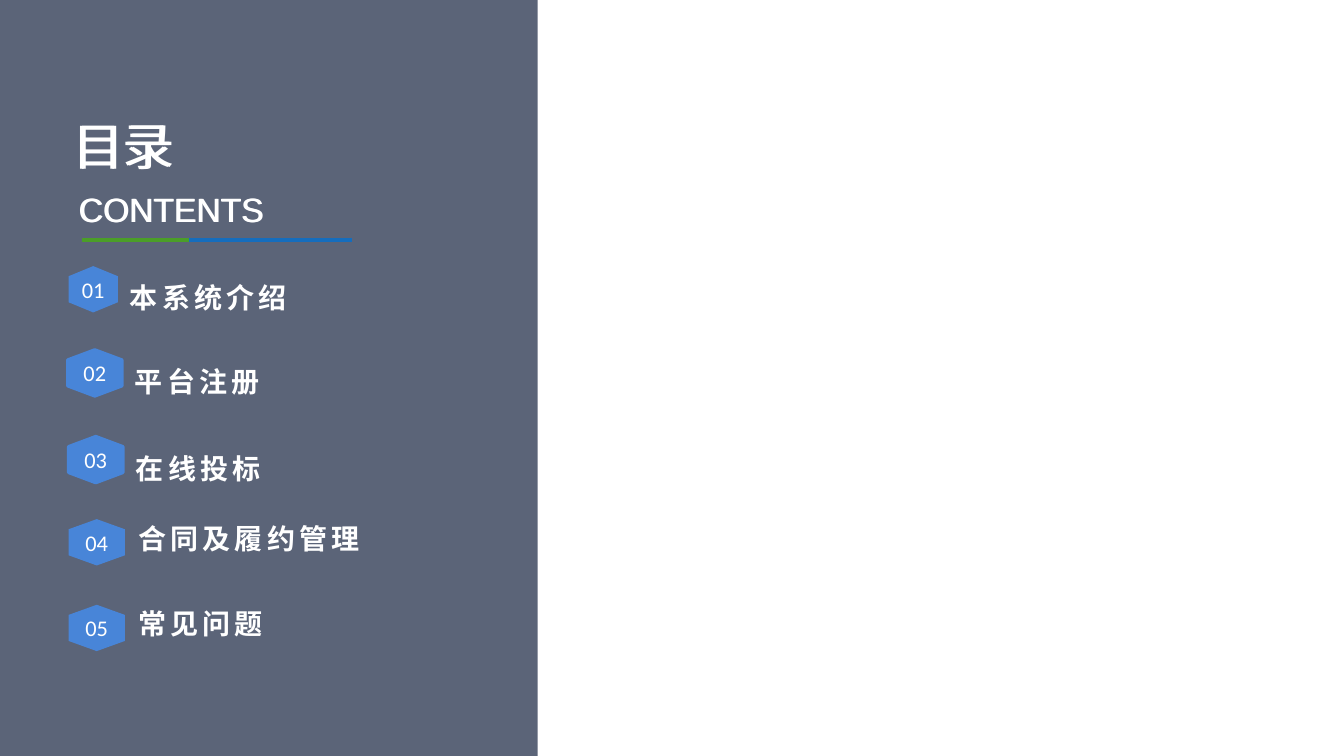
from lxml import etree
from pptx import Presentation
from pptx.dml.color import RGBColor
from pptx.enum.shapes import MSO_CONNECTOR, MSO_SHAPE
from pptx.enum.text import MSO_ANCHOR, MSO_AUTO_SIZE, PP_ALIGN
from pptx.oxml.ns import qn
from pptx.util import Inches, Pt

RECT = MSO_SHAPE.RECTANGLE
LINE = MSO_CONNECTOR.STRAIGHT
GROW = MSO_AUTO_SIZE.SHAPE_TO_FIT_TEXT
MIDDLE = MSO_ANCHOR.MIDDLE
CENTER = PP_ALIGN.CENTER

WIDE, HIGH = Inches(13.33), Inches(7.5)
HAN, SANS, DIGIT = "Noto Sans CJK SC", "Arial", "Calibri"
WHITE, NAVY, BLUE = "FFFFFF", "0B1836", "4885D8"
GREEN, AZURE = "4B9E28", "156DBD"


def color(code):
    return RGBColor.from_string(code)


def across(share):
    return round(WIDE * share / 100)


def down(share):
    return round(HIGH * share / 100)


class Page:
    """Draws styled elements on one slide, with lengths in percent of its size."""

    def __init__(self, slide):
        self.shapes = slide.shapes

    def panel(self, x, y, w, h, fill, alpha):
        box = self.shapes.add_shape(RECT, across(x), down(y), across(w), down(h))
        box.shadow.inherit = False
        box.fill.solid()
        box.fill.fore_color.rgb = color(fill)
        tint = box.fill._xPr.find(qn("a:solidFill"))[0]
        etree.SubElement(tint, qn("a:alpha")).set("val", str(alpha * 1000))
        box.line.fill.background()

    def rule(self, left, right, y, ink):
        line = self.shapes.add_connector(
            LINE, across(left), down(y), across(right), down(y))
        line.line.color.rgb = color(ink)
        line.line.width = Pt(3)
        etree.SubElement(line._element.spPr, qn("a:effectLst"))

    def run(self, para, words, size, face, bold=False, gap=0):
        run = para.add_run()
        run.text = words
        font = run.font
        font.size, font.name, font.bold = Pt(size), face, bold
        font.color.rgb = color(WHITE)
        props = run._r.get_or_add_rPr()
        etree.SubElement(props, qn("a:ea")).set("typeface", face)
        if gap:
            props.set("spc", str(gap * 100))

    def text(self, home, x, y, w, h, words, size, face, wrap=False, **style):
        box = home.add_textbox(across(x), down(y), across(w), down(h))
        frame = box.text_frame
        frame.word_wrap = wrap
        frame.auto_size = GROW
        para = frame.paragraphs[0]
        if wrap:
            para.line_spacing = 1.5
        self.run(para, words, size, face, **style)

    def badge(self, home, x, y, w, label, edge):
        h = 6.13
        mid, low, high = x + w / 2, y + 0.22 * h, y + 0.78 * h
        spots = [(mid, y), (x + w, low), (x + w, high),
                 (mid, y + h), (x, high), (x, low)]
        start, *rest = [(across(a), down(b)) for a, b in spots]
        form = home.build_freeform(*start)
        form.add_line_segments(rest, close=True)
        hexa = form.convert_to_shape()
        hexa.shadow.inherit = False
        hexa.fill.solid()
        hexa.fill.fore_color.rgb = color(BLUE)
        if edge:
            hexa.line.color.rgb = color(BLUE)
            hexa.line.width = Pt(2.25)
        else:
            hexa.line.fill.background()
        frame = hexa.text_frame
        frame.word_wrap = False
        frame.vertical_anchor = MIDDLE
        para = frame.paragraphs[0]
        para.alignment = CENTER
        self.run(para, label, 16, DIGIT)

    def entry(self, label, words, hexa, edge, spot, wrap):
        home = self.shapes.add_group_shape().shapes
        x, w, h = spot
        y = hexa[1] - (0.93 if wrap else 0.4)
        self.text(home, x, y, w, h, words, 20, HAN, wrap, bold=True, gap=3)
        self.badge(home, *hexa, label, edge)


ENTRIES = [
    ("本系统介绍", (5.1, 35.2, 3.68), False, (8.93, 32.78, 8.13), True),
    ("平台注册", (5.03, 46.27, 4.05), True, (9.3, 33.83, 7.33), True),
    ("在线投标", (5.1, 57.73, 4.05), True, (9.38, 33.83, 7.33), True),
    ("合同及履约管理", (5.1, 68.67, 4.2), False, (9.53, 18.45, 5.87), False),
    ("常见问题", (5.1, 80, 4.2), False, (9.53, 11.18, 5.87), False),
]


def main():
    deck = Presentation()
    deck.slide_width, deck.slide_height = WIDE, HIGH
    page = Page(deck.slides.add_slide(deck.slide_layouts[6]))
    page.panel(0, 0, 40, 100, NAVY, 67)
    for title, sub in ((4.8, 5.18), (4.65, 5.1)):
        page.text(page.shapes, title, 14.53, 9.08, 9.47, "目录", 36, HAN)
        page.text(page.shapes, sub, 24.27, 15.38, 6.67, "CONTENTS", 24, SANS)
    page.rule(6.08, 14.03, 31.73, GREEN)
    page.rule(14.03, 26.18, 31.73, AZURE)
    for rank, entry in enumerate(ENTRIES, 1):
        page.entry(f"{rank:02}", *entry)
    deck.save("out.pptx")


if __name__ == "__main__":
    main()
